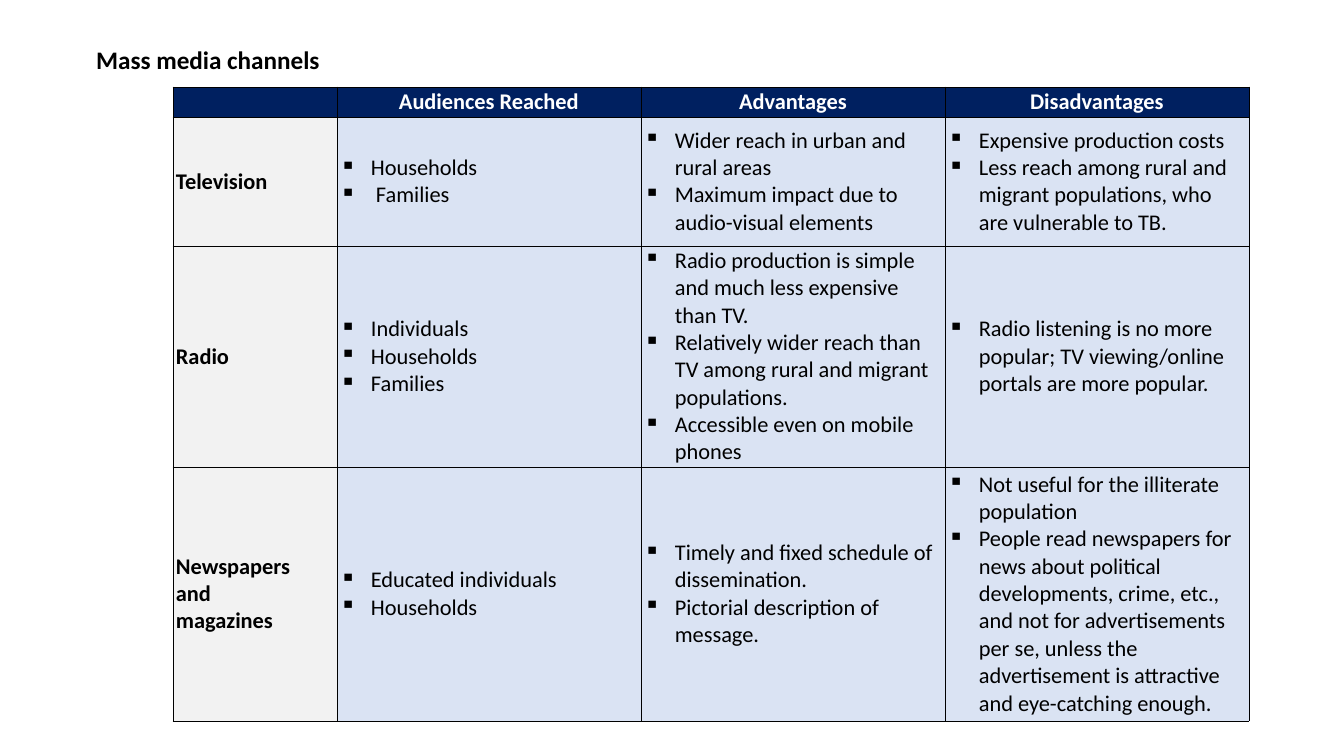
from lxml.etree import SubElement
from pptx import Presentation
from pptx.dml.color import RGBColor
from pptx.enum.text import MSO_ANCHOR, MSO_AUTO_SIZE, PP_ALIGN
from pptx.oxml.ns import qn
from pptx.util import Pt

PX = 914400 / 100.8
BLACK = RGBColor(0x00, 0x00, 0x00)
WHITE = RGBColor(0xFF, 0xFF, 0xFF)
NAVY = RGBColor(0x00, 0x20, 0x60)
GREY = RGBColor(0xF2, 0xF2, 0xF2)
PALE_BLUE = RGBColor(0xDA, 0xE3, 0xF3)

COLUMN_WIDTHS = [164, 304, 304, 304]
ROW_HEIGHTS = [30, 129, 221, 254]
BULLET_INDENT = 31

# Each cell is a list of paragraphs
CHANNELS = [
    [[], ["Audiences Reached"], ["Advantages"], ["Disadvantages"]],
    [
        ["Television"],
        ["Households", " Families"],
        ["Wider reach in urban and rural areas",
         "Maximum impact due to audio-visual elements"],
        ["Expensive production costs",
         "Less reach among rural and migrant populations, who are vulnerable to TB."],
    ],
    [
        ["Radio"],
        ["Individuals", "Households", "Families"],
        ["Radio production is simple and much less expensive than TV.",
         "Relatively wider reach than TV among rural and migrant populations.",
         "Accessible even on mobile phones"],
        ["Radio listening is no more popular; TV viewing/online portals are more popular."],
    ],
    [
        ["Newspapers", "and", "magazines"],
        ["Educated individuals", "Households"],
        ["Timely and fixed schedule of dissemination.",
         "Pictorial description of message."],
        ["Not useful for the illiterate population",
         "People read newspapers for news about political developments, crime, etc., "
         "and not for advertisements per se, unless the advertisement is attractive "
         "and eye-catching enough."],
    ],
]


def px(length):
    return round(length * PX)


def add_run(paragraph, text, size, color, bold):
    run = paragraph.add_run()
    run.text = text
    run.font.name = "Calibri"
    run.font.size = Pt(size)
    run.font.bold = bold
    run.font.color.rgb = color


presentation = Presentation()
presentation.slide_width, presentation.slide_height = px(1344), px(756)
slide = presentation.slides.add_slide(presentation.slide_layouts[5])

# Heading
heading = slide.shapes.title
heading.left, heading.top, heading.width, heading.height = px(86), px(39), px(246), px(40)
heading.text_frame.word_wrap = False
heading.text_frame.auto_size = MSO_AUTO_SIZE.SHAPE_TO_FIT_TEXT
heading.text_frame.vertical_anchor = MSO_ANCHOR.TOP
heading_line = heading.text_frame.paragraphs[0]
heading_line.alignment = PP_ALIGN.LEFT
add_run(heading_line, "Mass media channels", 18, BLACK, True)

# Table grid
channels = slide.shapes.add_table(
    len(ROW_HEIGHTS), len(COLUMN_WIDTHS), px(173), px(87),
    px(sum(COLUMN_WIDTHS)), px(sum(ROW_HEIGHTS))).table
channels.first_row = channels.horz_banding = False
for column, width in zip(channels.columns, COLUMN_WIDTHS):
    column.width = px(width)
for row, height in zip(channels.rows, ROW_HEIGHTS):
    row.height = px(height)

for r, row_texts in enumerate(CHANNELS):
    for c, texts in enumerate(row_texts):
        cell = channels.cell(r, c)
        is_header, is_channel = r == 0, c == 0
        cell.vertical_anchor = MSO_ANCHOR.MIDDLE
        cell.margin_left = cell.margin_right = px(3)
        cell.margin_top = cell.margin_bottom = px(1)

        # Borders, then fill
        cell_format = cell._tc.get_or_add_tcPr()
        for side in ("a:lnL", "a:lnR", "a:lnT", "a:lnB"):
            border = SubElement(cell_format, qn(side), w=str(Pt(0.5)))
            border_fill = SubElement(border, qn("a:solidFill"))
            SubElement(border_fill, qn("a:srgbClr"), val=str(BLACK))
        cell.fill.solid()
        cell.fill.fore_color.rgb = NAVY if is_header else GREY if is_channel else PALE_BLUE

        # Cell text
        frame = cell.text_frame
        if not texts:
            SubElement(frame.paragraphs[0]._p, qn("a:endParaRPr"), sz="1600")
        for i, text in enumerate(texts):
            paragraph = frame.add_paragraph() if i else frame.paragraphs[0]
            paragraph.alignment = PP_ALIGN.CENTER if is_header else PP_ALIGN.LEFT
            if not is_header and not is_channel:
                bullet_format = paragraph._p.get_or_add_pPr()
                bullet_format.set("marL", str(px(BULLET_INDENT)))
                bullet_format.set("indent", str(-px(BULLET_INDENT)))
                SubElement(bullet_format, qn("a:buChar"), char="▪")
            add_run(paragraph, text, 16, WHITE if is_header else BLACK,
                    is_header or is_channel)

presentation.save("out.pptx")
